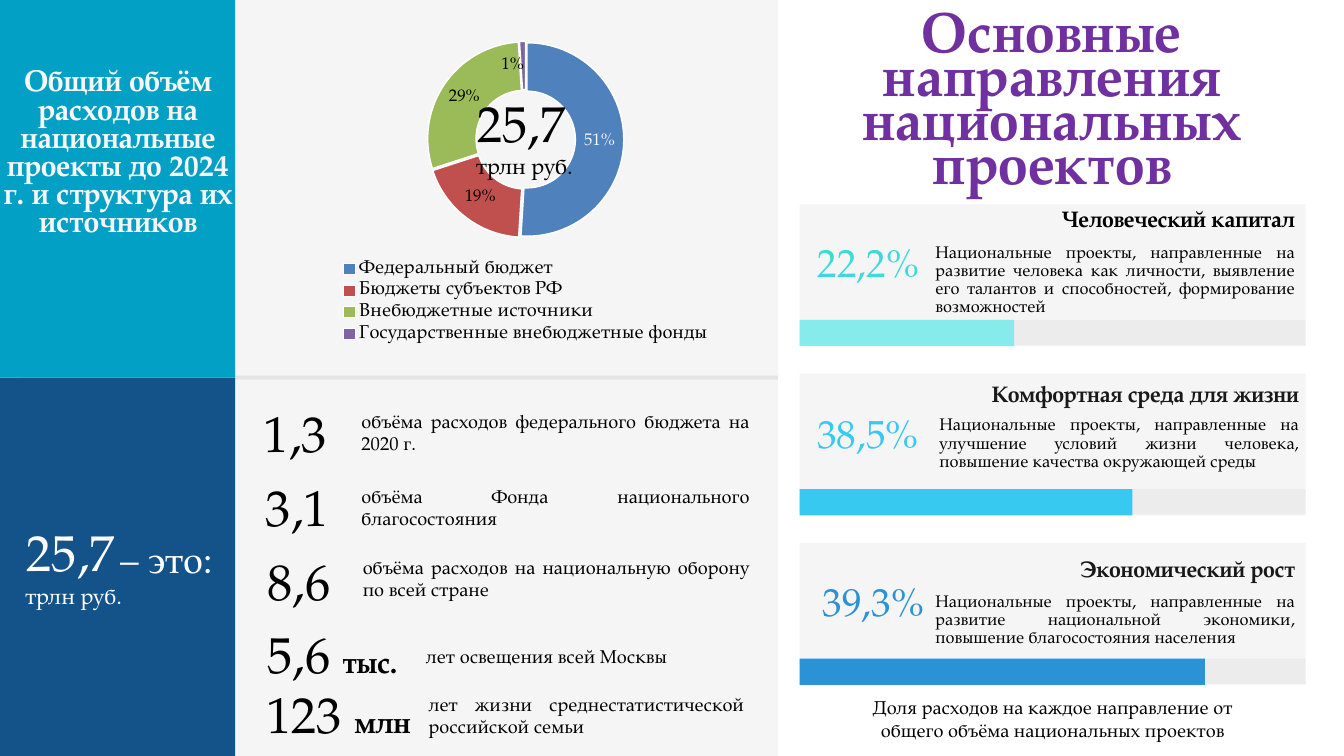
from dataclasses import dataclass

from lxml import etree
from pptx import Presentation
from pptx.chart.data import CategoryChartData
from pptx.dml.color import RGBColor
from pptx.enum.chart import XL_CHART_TYPE, XL_LEGEND_POSITION
from pptx.enum.shapes import MSO_SHAPE
from pptx.enum.text import MSO_AUTO_SIZE, PP_ALIGN
from pptx.oxml.ns import qn
from pptx.util import Inches, Pt

RECTANGLE = MSO_SHAPE.RECTANGLE
DOUGHNUT = XL_CHART_TYPE.DOUGHNUT
LEGEND_BOTTOM = XL_LEGEND_POSITION.BOTTOM
GROW = MSO_AUTO_SIZE.SHAPE_TO_FIT_TEXT
LEFT, CENTER, RIGHT, JUSTIFY = PP_ALIGN.LEFT, PP_ALIGN.CENTER, PP_ALIGN.RIGHT, PP_ALIGN.JUSTIFY

Box = tuple[float, float, float, float]


@dataclass(frozen=True)
class Theme:
    font: str = "TeX Gyre Pagella"
    black: str = "000000"
    ink: str = "191919"
    white: str = "FFFFFF"
    light: str = "F6F6F6"
    teal: str = "01A0C4"
    navy: str = "13538A"
    purple: str = "7030A0"
    slices: tuple[str, ...] = ("4F81BD", "C0504D", "9BBB59", "8064A2")
    title: float = 60
    figure: float = 54
    share: float = 42
    intro: float = 40
    panel: float = 32
    heading: float = 24
    note: float = 20
    body: float = 18


THEME = Theme()


@dataclass(frozen=True)
class Line:
    text: str
    size: float
    color: str = THEME.black
    bold: bool = False
    align: PP_ALIGN = CENTER
    spacing: Pt | float | None = None
    after: float = 0
    tail: str = ""
    tail_size: float = THEME.panel
    tracking: float = 0


@dataclass(frozen=True)
class Direction:
    heading: str
    body: str
    share: str
    share_at: tuple[float, float]
    text_box: Box
    bar_width: float
    bar_color: str
    share_color: str
    heading_color: str = THEME.ink
    gap: float = 12


@dataclass(frozen=True)
class Fact:
    number: str
    unit: str
    number_box: Box
    text: str
    text_box: Box


DIRECTIONS = (
    Direction("Человеческий капитал",
              "Национальные проекты, направленные на развитие человека как личности, "
              "выявление его талантов и способностей, формирование возможностей",
              "22,2%", (12.17, 3.54), (13.92, 3.04, 5.35, 1.68), 3.19, "86EBEA", "3EDAD9", THEME.black),
    Direction("Комфортная среда для жизни",
              "Национальные проекты, направленные на улучшение условий жизни человека, "
              "повышение качества окружающей среды",
              "38,5%", (12.16, 6.09), (13.98, 5.64, 5.35, 1.41), 4.95, "38C9F0", "38C9F1", gap=10),
    Direction("Экономический рост",
              "Национальные проекты, направленные на развитие национальной экономики, "
              "повышение благосостояния населения",
              "39,3%", (12.24, 8.59), (13.92, 8.24, 5.35, 1.41), 6.03, "2B92D5", "2B92D5"),
)
FACTS = (
    Fact("1,3", "", (3.82, 5.93, 1.15, 1.01),
         "объёма расходов федерального бюджета на 2020 г.", (5.28, 6.05, 5.97, 0.77)),
    Fact("3,1", "", (3.85, 7.04, 1.15, 1.01),
         "объёма Фонда национального благосостояния", (5.28, 7.16, 5.97, 0.77)),
    Fact("8,6", "", (3.87, 8.14, 1.15, 1.01),
         "объёма расходов на национальную оборону по всей стране", (5.3, 8.22, 5.95, 0.77)),
    Fact("5,6 ", "тыс.", (3.82, 9.23, 2.25, 1.01),
         "лет освещения всей Москвы", (6.24, 9.55, 5.03, 0.44)),
    Fact("123 ", "млн", (3.82, 10.12, 2.43, 1.01),
         "лет жизни среднестатистической российской семьи", (6.28, 10.26, 4.89, 0.77)),
)
SOURCES = (("Федеральный бюджет", 0.51), ("Бюджеты субъектов РФ", 0.19),
           ("Внебюджетные источники", 0.29), ("Государственные внебюджетные фонды", 0.01))


def add_block(slide, box: Box, color: str, opacity: int = 100) -> None:
    shape = slide.shapes.add_shape(RECTANGLE, *map(Inches, box))
    shape.shadow.inherit = False
    shape.line.fill.background()
    shape.fill.solid()
    shape.fill.fore_color.rgb = RGBColor.from_string(color)
    if opacity < 100:
        color_element = shape.fill._xPr.find(".//" + qn("a:srgbClr"))
        etree.SubElement(color_element, qn("a:alpha"), val=str(opacity * 1000))


def style_font(font, size: float, color: str = THEME.black) -> None:
    font.name, font.size = THEME.font, Pt(size)
    font.color.rgb = RGBColor.from_string(color)


def add_text(slide, box: Box, *lines: Line, inset: bool = True, wrap: bool = True) -> None:
    frame = slide.shapes.add_textbox(*map(Inches, box)).text_frame
    frame.word_wrap = wrap
    frame.auto_size = GROW
    if not inset:
        frame.margin_left = frame.margin_right = frame.margin_top = frame.margin_bottom = 0
    for index, line in enumerate(lines):
        paragraph = frame.add_paragraph() if index else frame.paragraphs[0]
        paragraph.alignment = line.align
        if line.spacing:
            paragraph.line_spacing = line.spacing
        if line.after:
            paragraph.space_after = Pt(line.after)
        style_font(paragraph.font, line.size, line.color)
        paragraph.font.bold = line.bold
        run = paragraph.add_run()
        run.text = line.text
        if line.tracking:
            run._r.get_or_add_rPr().set("spc", str(round(line.tracking * 100)))
        if line.tail:
            tail = paragraph.add_run()
            tail.text = line.tail
            tail.font.size, tail.font.bold = Pt(line.tail_size), True


def set_layout(parent, index: int, **values: float | str) -> None:
    for old in parent.findall(qn("c:layout")):
        parent.remove(old)
    layout = etree.Element(qn("c:layout"))
    manual = etree.SubElement(layout, qn("c:manualLayout"))
    for name, value in values.items():
        etree.SubElement(manual, qn(f"c:{name}"), val=str(value))
    parent.insert(index, layout)


def add_sources_chart(slide, box: Box) -> None:
    data = CategoryChartData(number_format="0%")
    data.categories = [name for name, _ in SOURCES]
    data.add_series("Series 1", [value for _, value in SOURCES])
    chart = slide.shapes.add_chart(DOUGHNUT, *map(Inches, box), data).chart
    style_font(chart.font, 16)
    chart.has_title = False
    chart.has_legend = True
    chart.legend.position = LEGEND_BOTTOM
    chart.legend.include_in_layout = False
    style_font(chart.legend.font, THEME.note)
    plot = chart.plots[0]
    plot.vary_by_categories = True
    series = plot.series[0]
    for index, color in enumerate(THEME.slices):
        slice_format = series.points[index].format
        slice_format.fill.solid()
        slice_format.fill.fore_color.rgb = RGBColor.from_string(color)
        slice_format.line.color.rgb = RGBColor.from_string(THEME.white)
        slice_format.line.width = Pt(1.5)
    labels = series.data_labels
    labels.show_value = True
    labels.number_format, labels.number_format_is_linked = "0%", False
    style_font(labels.font, THEME.body)
    style_font(series.points[0].data_label.font, THEME.body, THEME.light)
    style_font(series.points[3].data_label.font, THEME.body)

    # Ring geometry and placement of plot, legend and the smallest label
    explosion = etree.Element(qn("c:explosion"), val="3")
    series._element.find(qn("c:dPt")).addprevious(explosion)
    root = chart._chartSpace
    root.find(".//" + qn("c:holeSize")).set("val", "64")
    set_layout(root.find(".//" + qn("c:plotArea")), 0, layoutTarget="inner", xMode="edge",
               yMode="edge", x=0.33, y=0.04, w=0.38, h=0.6)
    set_layout(chart.legend._element, 1, xMode="edge", yMode="edge", x=0.16, y=0.7, w=0.72, h=0.27)
    set_layout(root.findall(".//" + qn("c:dLbl"))[-1], 1, x=-0.02, y=0)


def add_direction(slide, top: float, item: Direction) -> None:
    left, width, bar_top, bar_height = 11.9, 7.53, top + 1.72, 0.39
    add_block(slide, (left, top, width, 2.1), THEME.ink, 4)
    add_block(slide, (left, bar_top, width, bar_height), THEME.ink, 4)
    add_block(slide, (left, bar_top, item.bar_width, bar_height), item.bar_color)
    add_text(slide, (*item.share_at, 1.9, 0.7),
             Line(item.share, THEME.share, item.share_color, align=LEFT, spacing=Pt(50.4)), inset=False)
    add_text(slide, item.text_box,
             Line(item.heading, THEME.heading, item.heading_color, True, RIGHT, Pt(30.1), item.gap),
             Line(item.body, THEME.body, align=JUSTIFY, spacing=0.9), inset=False)


def add_total(slide, left: float, top: float, color: str) -> None:
    add_text(slide, (left, top, 1.71, 1.41),
             Line("25,7", THEME.figure, color, tail=" ", tail_size=THEME.heading),
             Line("трлн руб.", THEME.heading, color), wrap=False)


def main() -> None:
    presentation = Presentation()
    presentation.slide_width, presentation.slide_height = Inches(20), Inches(11.25)
    slide = presentation.slides.add_slide(presentation.slide_layouts[6])

    # Left panels
    add_block(slide, (0.31, 0, 11.27, 11.25), THEME.ink, 4)
    add_block(slide, (0.31, 5.59, 11.27, 0.06), THEME.ink, 7)
    add_block(slide, (0, 5.62, 3.5, 5.63), THEME.navy)
    add_block(slide, (0, 0, 3.5, 5.62), THEME.teal)
    add_text(slide, (0.04, 1.04, 3.43, 2.96),
             Line("Общий объём расходов на национальные проекты до 2024 г. и структура их источников",
                  THEME.panel, THEME.light, True, spacing=Pt(30.1)), inset=False)

    # National project directions
    for index, item in enumerate(DIRECTIONS):
        add_direction(slide, 3.04 + 2.52 * index, item)
    add_text(slide, (11.14, 0.29, 9.03, 2.7),
             *(Line(text, THEME.title, THEME.purple, True, spacing=Pt(47.2), tracking=1.1)
               for text in ("Основные направления", "национальных проектов")), inset=False)
    add_text(slide, (12.19, 10.31, 6.95, 0.77),
             Line("Доля расходов на каждое направление от", THEME.note),
             Line("общего объёма национальных проектов", THEME.note))

    # Funding sources and the total
    add_sources_chart(slide, (3.74, 0.42, 7.85, 4.87))
    add_total(slide, 6.95, 1.32, THEME.black)
    add_total(slide, 0.24, 7.71, THEME.white)
    add_text(slide, (1.68, 7.93, 1.6, 0.77), Line("– это:", THEME.intro, THEME.white), wrap=False)

    # What the total equals
    for fact in FACTS:
        add_text(slide, fact.number_box, Line(fact.number, THEME.figure, tail=fact.unit), wrap=False)
        add_text(slide, fact.text_box, Line(fact.text, THEME.note, align=JUSTIFY))

    presentation.save("out.pptx")


if __name__ == "__main__":
    main()
